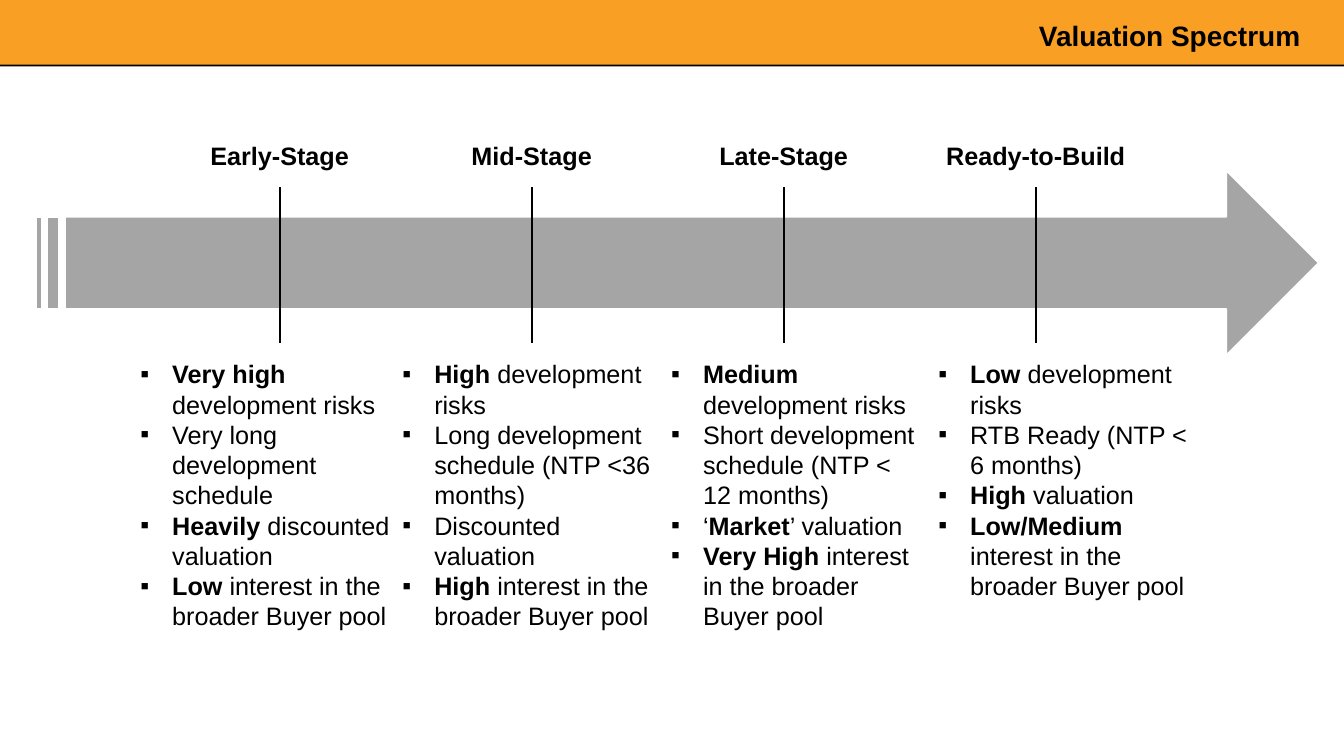
from dataclasses import dataclass

from lxml import etree
from pptx import Presentation
from pptx.dml.color import RGBColor
from pptx.enum.shapes import MSO_CONNECTOR, MSO_SHAPE
from pptx.enum.text import MSO_ANCHOR, MSO_AUTO_SIZE, PP_ALIGN
from pptx.oxml.ns import qn
from pptx.util import Inches, Pt

STRAIGHT = MSO_CONNECTOR.STRAIGHT
RECTANGLE, STRIPED_ARROW = MSO_SHAPE.RECTANGLE, MSO_SHAPE.STRIPED_RIGHT_ARROW
TOP, MIDDLE = MSO_ANCHOR.TOP, MSO_ANCHOR.MIDDLE
CENTER, LEFT, RIGHT = PP_ALIGN.CENTER, PP_ALIGN.LEFT, PP_ALIGN.RIGHT
NO_AUTOFIT = MSO_AUTO_SIZE.NONE

COLORS = {"black": "000000", "orange": "F99F23", "gray": "A5A5A5", "white": "FFFFFF"}
FONT = "Arial"
STAGE_SIZE = 21.6
FIRST_MARK, MARK_STEP = 3.33, 3.0
LABEL_WIDTH = 2.76
BULLET_INDENT = 0.38


@dataclass
class Stage:
    name: str
    list_left: float
    points: list[str]  # ** switches bold on and off


STAGES = [
    Stage("Early-Stage", 1.57, [
        "**Very high **development risks",
        "Very long development schedule",
        "**Heavily** discounted valuation",
        "**Low** interest in the broader Buyer pool"]),
    Stage("Mid-Stage", 4.69, [
        "**High **development risks",
        "Long development schedule (NTP <36 months)",
        "Discounted valuation",
        "**High **interest in the broader Buyer pool"]),
    Stage("Late-Stage", 7.89, [
        "**Medium **development risks",
        "Short development schedule (NTP < 12 months)",
        "‘**Market**’ valuation",
        "**Very High **interest in the broader Buyer pool"]),
    Stage("Ready-to-Build", 11.07, [
        "**Low **development risks",
        "RTB Ready (NTP < 6 months)",
        "**High** valuation",
        "**Low/Medium **interest in the broader Buyer pool"]),
]


def rgb(color: str) -> RGBColor:
    return RGBColor.from_string(COLORS[color])


def place(shape, left: float, top: float, width: float, height: float) -> None:
    shape.left, shape.top = Inches(left), Inches(top)
    shape.width, shape.height = Inches(width), Inches(height)


def set_font(font, size: float) -> None:
    font.name, font.size = FONT, Pt(size)
    font.color.rgb = rgb("black")


def add_block(slide, preset, left: float, top: float, width: float, height: float,
              fill: str, outline: str | None = None) -> None:
    block = slide.shapes.add_shape(
        preset, Inches(left), Inches(top), Inches(width), Inches(height))
    block.shadow.inherit = False
    block.fill.solid()
    block.fill.fore_color.rgb = rgb(fill)
    if outline:
        block.line.color.rgb = rgb(outline)
        block.line.width = Pt(1.5)
    else:
        block.line.fill.background()


def add_mark(slide, x: float) -> None:
    mark = slide.shapes.add_connector(
        STRAIGHT, Inches(x), Inches(2.23), Inches(x), Inches(4.08))
    mark.line.color.rgb = rgb("black")
    mark.line.width = Pt(1.5)
    etree.SubElement(mark._element.spPr, qn("a:effectLst"))


def add_label(slide, text: str, x: float) -> None:
    label = slide.shapes.add_textbox(
        Inches(x - LABEL_WIDTH / 2), Inches(1.62), Inches(LABEL_WIDTH), Inches(0.46))
    label.text_frame.word_wrap = True
    heading = label.text_frame.paragraphs[0]
    heading.text = text
    heading.alignment = CENTER
    set_font(heading.font, STAGE_SIZE)
    heading.font.bold = True


def add_bullet(paragraph) -> None:
    properties = paragraph._p.get_or_add_pPr()
    properties.set("marL", str(Inches(BULLET_INDENT)))
    properties.set("indent", str(-Inches(BULLET_INDENT)))
    etree.SubElement(properties, qn("a:buFont"), typeface=FONT)
    etree.SubElement(properties, qn("a:buChar"), char="▪")


def fill_list(body, stage: Stage) -> None:
    place(body, stage.list_left, 4.22, 3.18, 3.37)
    frame = body.text_frame
    frame.word_wrap = True
    frame.auto_size = NO_AUTOFIT
    frame.vertical_anchor = TOP
    for number, point in enumerate(stage.points):
        paragraph = frame.add_paragraph() if number else frame.paragraphs[0]
        add_bullet(paragraph)
        paragraph.alignment = LEFT
        paragraph.space_before = Pt(0)
        set_font(paragraph.font, STAGE_SIZE)
        for part, text in enumerate(point.split("**")):
            if text:
                run = paragraph.add_run()
                run.text = text
                run.font.bold = part % 2 == 1


def fill_title(slide) -> None:
    title = slide.shapes.title
    place(title, 4.9, 0.1, 10.7, 0.62)
    slide.shapes._spTree.append(title._element)  # in front of the header bar
    frame = title.text_frame
    frame.auto_size = NO_AUTOFIT
    frame.vertical_anchor = MIDDLE
    frame.margin_left = frame.margin_right = Inches(0.12)
    frame.margin_top = frame.margin_bottom = Inches(0.06)
    heading = frame.paragraphs[0]
    heading.text = "Valuation Spectrum"
    heading.alignment = RIGHT
    heading.line_spacing = 1.07
    heading.space_after = Pt(9.6)
    set_font(heading.font, 24)
    heading.font.bold = True


def main() -> None:
    presentation = Presentation()
    presentation.slide_width, presentation.slide_height = Inches(16), Inches(9)
    # The comparison layout has a title and four bodies
    slide = presentation.slides.add_slide(presentation.slide_layouts[4])
    bodies = [holder for holder in slide.placeholders if holder.placeholder_format.idx]

    # Header
    add_block(slide, RECTANGLE, -0.02, 0, 16.03, 0.79, "black")
    add_block(slide, RECTANGLE, -0.02, 0, 16.03, 0.77, "orange")
    fill_title(slide)

    # Spectrum arrow and its stages
    add_block(slide, STRIPED_ARROW, 0.43, 2.03, 15.27, 2.2, "gray", "white")
    for number, (stage, body) in enumerate(zip(STAGES, bodies)):
        x = FIRST_MARK + number * MARK_STEP
        add_mark(slide, x)
        add_label(slide, stage.name, x)
        fill_list(body, stage)

    presentation.save("out.pptx")


if __name__ == "__main__":
    main()
